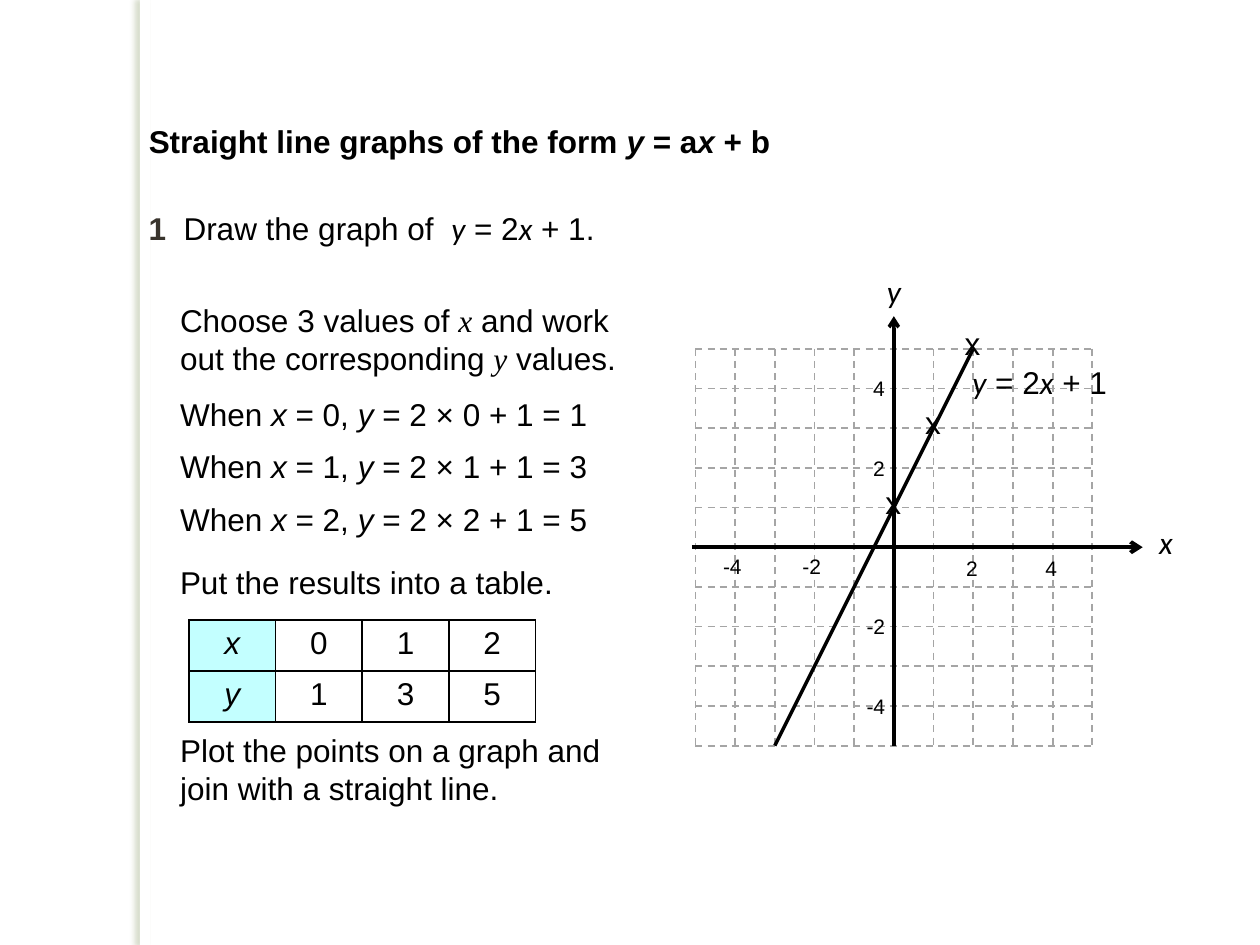
from dataclasses import dataclass
from lxml import etree
from pptx import Presentation, util as u
from pptx.dml.color import RGBColor
from pptx.enum import dml, shapes, text
from pptx.oxml import ns

Pt = u.Pt


@dataclass
class Theme:
    ink: str = "000000"
    paper: str = "FFFFFF"
    mark: str = "39342D"
    grid: str = "A5A5A5"
    head: str = "C3FFFF"
    shade: str = "657B39"
    font: str = "Arial"
    math: str = "Calibri"
    serif: str = "Times New Roman"
    body: float = 18
    small: float = 12
    thin: float = 1
    thick: float = 2


def rgb(code):
    return RGBColor.from_string(code)


def node(top, tag, **attrs):
    item = etree.SubElement(top, ns.qn(tag))
    for key, val in attrs.items():
        item.set(key, str(val))
    return item


class Page:
    def __init__(self, slide, theme):
        self.slide, self.theme = slide, theme
        self.items = slide.shapes

    def run(self, para, words, size=None, bold=False, tilt=False,
            font=None, color=None):
        r = para.add_run()
        r.text = words
        f = r.font
        f.size, f.bold, f.italic = Pt(size or self.theme.body), bold, tilt
        f.name = font or self.theme.font
        f.color.rgb = rgb(color or self.theme.ink)

    def runs(self, para, words, var=None, **style):
        """Add runs; parts between asterisks are italic variables."""
        for i, part in enumerate(words.split("*")):
            if part:
                tilt = i % 2 == 1
                self.run(para, part, tilt=tilt,
                         font=var if tilt else None, **style)

    def title(self, words, x, y, w, h):
        box = self.items.title
        box.left, box.top, box.width, box.height = map(Pt, (x, y, w, h))
        frame = box.text_frame
        frame.vertical_anchor = text.MSO_ANCHOR.TOP
        frame.auto_size = text.MSO_AUTO_SIZE.NONE
        para = frame.paragraphs[0]
        para.alignment = text.PP_ALIGN.LEFT
        self.runs(para, words, bold=True)

    def label(self, words, x, y, w, h=28.8, **style):
        frame = self.items.add_textbox(*map(Pt, (x, y, w, h))).text_frame
        frame.word_wrap = True
        para = frame.paragraphs[0]
        self.runs(para, words, **style)
        return para

    def task(self, num, words, x, y, w, stops):
        para = self.label("", x, y, w)
        tabs = node(para._p.get_or_add_pPr(), "a:tabLst")
        for stop in stops:
            node(tabs, "a:tab", pos=Pt(stop), algn="l")
        self.run(para, num, bold=True, color=self.theme.mark)
        self.runs(para, words, var=self.theme.math)

    def line(self, start, end, color=None, width=None, dash=False, arrow=False):
        link = self.items.add_connector(
            shapes.MSO_CONNECTOR.STRAIGHT, *map(Pt, (*start, *end)))
        link.line.color.rgb = rgb(color or self.theme.ink)
        link.line.width = Pt(width or self.theme.thick)
        if dash:
            link.line.dash_style = dml.MSO_LINE.DASH
        if arrow:
            node(link.line._get_or_add_ln(), "a:tailEnd", type="arrow")
        node(link._element.spPr, "a:effectLst")

    def strip(self, x, y, w, h):
        bar = self.items.add_shape(
            shapes.MSO_SHAPE.RECTANGLE, *map(Pt, (x, y, w, h)))
        bar.fill.solid()
        bar.fill.fore_color.rgb = rgb(self.theme.paper)
        bar.line.fill.background()
        glow = node(node(bar._element.spPr, "a:effectLst"), "a:outerShdw",
                    blurRad=Pt(3), dist=Pt(3), dir=180 * 60000, rotWithShape=0)
        node(node(glow, "a:srgbClr", val=self.theme.shade),
             "a:alpha", val=25000)
        self.items.title.element.addprevious(bar.element)

    def table(self, rows, x, y, w, h):
        count = len(rows[0])
        grid = self.items.add_table(
            len(rows), count, *map(Pt, (x, y, w * count, h * len(rows)))).table
        grid.first_row = grid.horz_banding = False
        for i, row in enumerate(rows):
            for j, words in enumerate(row):
                self.cell(grid.cell(i, j), words, j == 0)

    def cell(self, cell, words, head):
        para = cell.text_frame.paragraphs[0]
        para.alignment = text.PP_ALIGN.CENTER
        self.runs(para, words)
        props = cell._tc.get_or_add_tcPr()
        for side in "LRTB":
            edge = node(props, f"a:ln{side}", w=Pt(self.theme.thin))
            node(node(edge, "a:solidFill"), "a:srgbClr", val=self.theme.ink)
        if head:
            cell.fill.solid()
            cell.fill.fore_color.rgb = rgb(self.theme.head)
        else:
            cell.fill.background()

    def graph(self, x, y, unit, span):
        th = self.theme

        def spot(a, b):
            return x + a * unit, y - b * unit

        # Grid
        for n in range(-span, span + 1):
            for a, b in (((n, span), (n, -span)), ((-span, n), (span, n))):
                self.line(spot(*a), spot(*b), th.grid, th.thin, dash=True)
        # Axes and their names
        left, low = spot(-span, -span)
        self.line((left - 2, y), (653, y), width=2.25, arrow=True)
        self.line((x, low), (x, 180.7), arrow=True)
        self.label("*y*", 499.7, 152, 65.5, var=th.math)
        self.label("*x*", 655.2, 295.2, 41.8, var=th.math)
        # Scale numbers
        for n in (-4, -2, 2, 4):
            px, py = spot(n, n)
            neg = n < 0
            self.label(str(n), px - (14 if neg else 11.2),
                       y if neg else y + 1.2, 36, 21.6, size=th.small)
            self.label(str(n), x - (22.7 if neg else 19), py - 10.8,
                       36, 21.6, size=th.small)
        # Plotted points and the line through them
        for a in (0, 1, 2):
            px, py = spot(a, 2 * a + 1)
            self.label("x", px - 12, py - 17.7, 41.8)
        self.line(spot(2, 5), spot(-3, -5))
        self.label("*y* = 2*x* + 1", 548.6, 203.8, 99.4, var=th.math)


def main():
    deck = Presentation()
    deck.slide_width, deck.slide_height = Pt(720), Pt(540)
    theme = Theme()
    page = Page(deck.slides.add_slide(deck.slide_layouts[5]), theme)

    # Side strip, heading and question
    page.strip(80, 0, 5.8, 540)
    page.title("Straight line graphs of the form *y* = a*x* + b",
               77.8, 66.2, 498, 28.8)
    page.task("1", "\tDraw the graph of\t*y* = 2*x* + 1.",
              77.8, 116, 288, (20, 173))

    # Working
    edge = 95.8
    page.label("Choose 3 values of *x* and work out the corresponding *y* values.",
               edge, 168.5, 288, 51, var=theme.serif)
    for n in range(3):
        page.label(f"When *x* = {n}, *y* = 2 × {n} + 1 = {2 * n + 1}",
                   edge, 222 + 30 * n, 264)
    page.label("Put the results into a table.", edge, 318.2, 282)
    page.table((("*x*", "0", "1", "2"), ("*y*", "1", "3", "5")),
               108, 354.2, 49.5, 29.2)
    page.label("Plot the points on a graph and join with a straight line.",
               edge, 414, 264, 51)

    # Graph
    page.graph(510.8, 312.7, 22.68, 5)
    deck.save("out.pptx")


if __name__ == "__main__":
    main()
